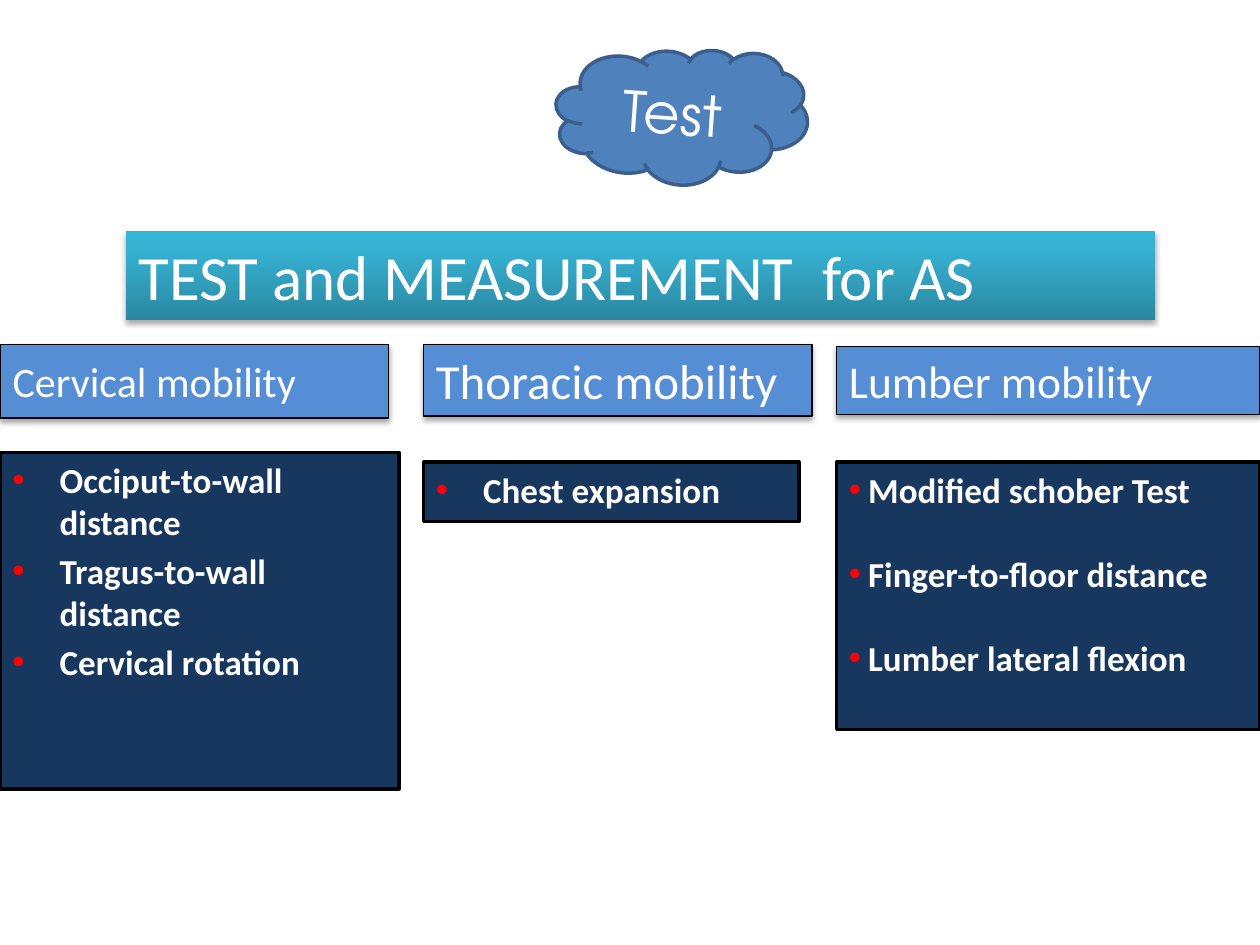
from copy import deepcopy

from pptx import Presentation
from pptx.dml.color import RGBColor
from pptx.enum.shapes import MSO_SHAPE as Shape
from pptx.enum.text import MSO_ANCHOR as Anchor, MSO_AUTO_SIZE as AutoSize, PP_ALIGN as Align
from pptx.oxml import parse_xml
from pptx.oxml.ns import nsdecls, qn
from pptx.util import Pt


def color(value):
    return RGBColor.from_string(value)


class TestSlide:
    FONT = "Calibri"
    TEXT = "FFFFFF"
    BORDER = "000000"
    HEADER = "558ED5"
    PANEL = "17375E"
    BULLET = "FF0000"
    BANNER = ((0, "2A88A2"), (0.8, "37B1D2"), (1, "34B4D6"))

    def __init__(self, deck):
        self.slide = deck.slides.add_slide(deck.slide_layouts[5])

    def box(self, bounds, kind=Shape.RECTANGLE):
        shape = self.slide.shapes.add_shape(kind, *map(Pt, bounds))
        shape.shadow.inherit = False
        return shape

    def paint(self, shape, fill, border, width):
        shape.fill.solid()
        shape.fill.fore_color.rgb = color(fill)
        shape.line.color.rgb = color(border)
        shape.line.width = Pt(width)

    def drop_shadow(self, shape):
        shape.shadow.inherit = False
        effects = shape._element.spPr.find(qn("a:effectLst"))
        effects.append(parse_xml(
            f'<a:outerShdw {nsdecls("a")} blurRad="{Pt(3.1)}" dist="{Pt(1.8)}" '
            'dir="5400000" rotWithShape="0"><a:srgbClr val="000000">'
            '<a:alpha val="35000"/></a:srgbClr></a:outerShdw>'))

    def frame(self, shape, anchor):
        frame = shape.text_frame
        frame.word_wrap = True
        frame.auto_size = AutoSize.NONE
        frame.vertical_anchor = anchor
        return frame

    def add_text(self, paragraph, text, size, bold=False, font=FONT, align=Align.LEFT):
        paragraph.alignment = align
        run = paragraph.add_run()
        run.text = text
        run.font.name = font
        run.font.size = Pt(size)
        run.font.bold = bold
        run.font.color.rgb = color(self.TEXT)

    def header(self, shape, text, size, anchor=Anchor.TOP):
        self.paint(shape, self.HEADER, self.BORDER, 0.75)
        self.drop_shadow(shape)
        self.add_text(self.frame(shape, anchor).paragraphs[0], text, size)

    def title(self, bounds, text, size):
        title = self.slide.shapes.title
        title.left, title.top, title.width, title.height = map(Pt, bounds)
        self.header(title, text, size, Anchor.MIDDLE)

    def panel(self, bounds, items, indent, gap):
        shape = self.box(bounds)
        self.paint(shape, self.PANEL, self.BORDER, 2)
        frame = self.frame(shape, Anchor.TOP)
        for index, item in enumerate(items):
            paragraph = frame.add_paragraph() if index else frame.paragraphs[0]
            self.add_text(paragraph, item, 20, bold=True)
            paragraph.space_before = Pt(gap if index else 0)
            self.bullet(paragraph, indent)

    def bullet(self, paragraph, indent):
        props = paragraph._p.get_or_add_pPr()
        props.set("marL", str(Pt(indent)))
        props.set("indent", str(-Pt(indent)))
        for xml in (
            f'<a:buClr {nsdecls("a")}><a:srgbClr val="{self.BULLET}"/></a:buClr>',
            f'<a:buFont {nsdecls("a")} typeface="Arial"/>',
            f'<a:buChar {nsdecls("a")} char="•"/>',
        ):
            props.append(parse_xml(xml))

    def banner(self, bounds, text):
        shape = self.box(bounds)
        shape.fill.gradient()
        shape.fill.gradient_angle = 90
        stop_list = shape._element.spPr.find(".//" + qn("a:gsLst"))
        stop_list.append(deepcopy(stop_list[-1]))
        for stop, (position, shade) in zip(shape.fill.gradient_stops, self.BANNER):
            stop.position = position
            stop.color.rgb = color(shade)
        shape.line.fill.background()
        self.drop_shadow(shape)
        self.add_text(self.frame(shape, Anchor.TOP).paragraphs[0], text, 36)

    def cloud(self, bounds, text):
        shape = self.box(bounds, Shape.CLOUD)
        shape.rotation = 4
        self.paint(shape, "4F81BD", "3A5F8C", 2)
        paragraph = self.frame(shape, Anchor.MIDDLE).paragraphs[0]
        self.add_text(paragraph, text, 32, font="TeX Gyre Adventor", align=Align.CENTER)


def main():
    deck = Presentation()
    deck.slide_width, deck.slide_height = Pt(720), Pt(540)
    page = TestSlide(deck)
    thoracic, lumbar = 242, 478

    page.title((0, 196.8, 222, 42), "Cervical mobility", 24)
    page.panel((0, 258.6, 228.2, 192.2),
               ("Occiput-to-wall distance", "Tragus-to-wall distance", "Cervical rotation"),
               indent=27, gap=4)

    page.header(page.box((thoracic, 196.8, 222, 41)), "Thoracic mobility", 28)
    page.panel((thoracic, 264, 214.5, 34), ("Chest expansion",), indent=27, gap=4)

    page.header(page.box((lumbar, 198, 242, 39)), "Lumber mobility", 26)
    page.panel((lumbar, 264, 242, 153),
               ("Modified schober Test", "Finger-to-floor distance", "Lumber lateral flexion"),
               indent=11, gap=24)

    page.banner((72, 132, 588, 51), "TEST and MEASUREMENT  for AS")
    page.cloud((317.5, 27.5, 144, 78), "Test")
    deck.save("out.pptx")


if __name__ == "__main__":
    main()
